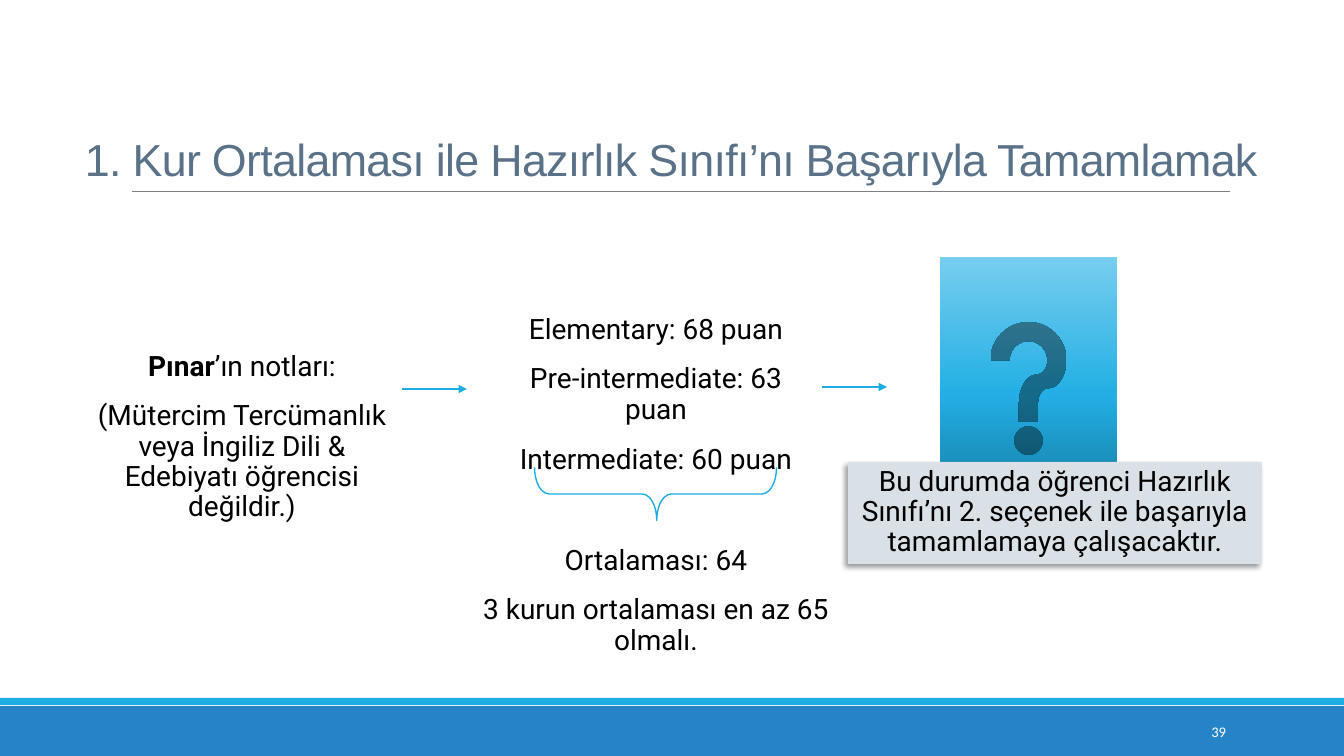
import copy

import pptx
import pptx.util
import pptx.dml.color
import pptx.enum.shapes
import pptx.enum.text
import pptx.oxml
import pptx.oxml.ns
from lxml import etree

# Content: boxes are (left, top, width, height) in px
SLIDE_SIZE = (1344, 756)
TITLE = ("1. Kur Ortalaması ile Hazırlık Sınıfı’nı Başarıyla Tamamlamak", (75, 31, 1270, 160))
PAGE_NUMBER = ("39", (1092, 712, 144, 40))
STUDENT = "Pınar"
PASSAGES = [
    ((94, 347, 296, 85), [
        [STUDENT, "’ın notları:"],
        ["(Mütercim Tercümanlık veya İngiliz Dili & Edebiyatı öğrencisi değildir.)"],
    ]),
    ((512, 310, 288, 135), [
        ["Elementary: 68 puan"],
        ["Pre-intermediate: 63 puan"],
        ["Intermediate: 60 puan"],
    ]),
    ((464, 541, 384, 85), [
        ["Ortalaması: 64"],
        ["3 kurun ortalaması en az 65 olmalı."],
    ]),
]
OUTCOME = ("Bu durumda öğrenci Hazırlık Sınıfı’nı 2. seçenek ile başarıyla tamamlamaya çalışacaktır.",
           (848, 462, 414, 102))
FOOTER_BANDS = [((0, 706, 1344, 50), "2683C6"), ((0, 698, 1344, 7), "1CADE4")]
TITLE_RULE = (132, 191, 1230, 191)
ARROWS = [(402, 389, 467, 389), (822, 387, 887, 387)]
HELP_BOX = (940, 257, 177, 263)
HELP_GRADIENT = [(0, "127499"), (0.48, "23AFE5"), (1, "77CEEF")]
BRACE_BOX = (629, 373, 53, 242)
ACCENT = "1CADE4"

SHAPE = pptx.enum.shapes.MSO_SHAPE
ALIGN = pptx.enum.text.PP_ALIGN
ANCHOR = pptx.enum.text.MSO_ANCHOR
Pt = pptx.util.Pt
qn = pptx.oxml.ns.qn


def px(lengths):
    return [pptx.util.Emu(round(length * 914400 / 100.8)) for length in lengths]


def color(hex_code):
    return pptx.dml.color.RGBColor.from_string(hex_code)


presentation = pptx.Presentation()
presentation.slide_width, presentation.slide_height = px(SLIDE_SIZE)
slide = presentation.slides.add_slide(presentation.slide_layouts[6])


def add_shape(kind, box, fill=None, line=None):
    shape = slide.shapes.add_shape(kind, *px(box))
    shape.shadow.inherit = False
    if fill:
        shape.fill.solid()
        shape.fill.fore_color.rgb = color(fill)
    else:
        shape.fill.background()
    if line:
        shape.line.color.rgb = color(line)
        shape.line.width = Pt(1)
    else:
        shape.line.fill.background()
    return shape


def add_line(ends, line, width, arrow=False):
    connector = slide.shapes.add_connector(pptx.enum.shapes.MSO_CONNECTOR.STRAIGHT, *px(ends))
    connector.line.color.rgb = color(line)
    connector.line.width = Pt(width)
    if arrow:
        etree.SubElement(connector.line._get_or_add_ln(), qn("a:tailEnd"), type="triangle")
    etree.SubElement(connector._element.spPr, qn("a:effectLst"))


def add_text_frame(box, anchor=ANCHOR.TOP):
    frame = slide.shapes.add_textbox(*px(box)).text_frame
    frame.word_wrap = True
    frame.vertical_anchor = anchor
    return frame


def style_run(run, font, size, hex_code):
    run.font.name = font
    run.font.size = Pt(size)
    run.font.color.rgb = color(hex_code)


def write_passage(frame, paragraphs):
    for index, parts in enumerate(paragraphs):
        paragraph = frame.add_paragraph() if index else frame.paragraphs[0]
        paragraph.alignment = ALIGN.CENTER
        paragraph.line_spacing = 0.9
        paragraph.space_before = Pt(12 if index else 0)
        paragraph.space_after = Pt(2)
        for part in parts:
            run = paragraph.add_run()
            run.text = part
            style_run(run, "Roboto", 20, "000000")
            run.font.bold = part == STUDENT


# Footer bands and title rule
for band_box, band_fill in FOOTER_BANDS:
    add_shape(SHAPE.RECTANGLE, band_box, band_fill)
add_line(TITLE_RULE, "808080", 0.5)

# Title
title_text, title_box = TITLE
title = add_text_frame(title_box, ANCHOR.BOTTOM)
title.text = title_text
title.paragraphs[0].line_spacing = 0.85
title_run = title.paragraphs[0].runs[0]
style_run(title_run, "Arial", 32, "597287")
title_run.font._element.set("spc", "-50")

# Grades and averages
for passage_box, passage in PASSAGES:
    passage_frame = add_text_frame(passage_box)
    passage_frame.margin_left = passage_frame.margin_right = 0
    write_passage(passage_frame, passage)

# Arrows between the steps
for arrow_ends in ARROWS:
    add_line(arrow_ends, ACCENT, 1, arrow=True)

# Question mark, dark at the bottom
help_button = add_shape(SHAPE.ACTION_BUTTON_HELP, HELP_BOX)
help_button.fill.gradient()
help_button.fill.gradient_angle = 90
stop_list = help_button._element.spPr.find(".//" + qn("a:gsLst"))
stop_list.append(copy.deepcopy(stop_list[-1]))
for stop, (position, stop_color) in zip(help_button.fill.gradient_stops, HELP_GRADIENT):
    stop.position = position
    stop.color.rgb = color(stop_color)

# Brace under the grades
brace = add_shape(SHAPE.RIGHT_BRACE, BRACE_BOX, line=ACCENT)
brace.rotation = 90
brace.adjustments[0] = 0.275
brace.adjustments[1] = 0.495

# Outcome with its shadow
outcome_text, outcome_box = OUTCOME
outcome = add_shape(SHAPE.RECTANGLE, outcome_box, "D9E0E6")
shadow = etree.SubElement(outcome._element.spPr.find(qn("a:effectLst")), qn("a:outerShdw"),
                          blurRad=str(Pt(4)), dist=str(Pt(3)), dir="8100000", algn="tr", rotWithShape="0")
shadow_color = etree.SubElement(shadow, qn("a:srgbClr"), val="000000")
etree.SubElement(shadow_color, qn("a:alpha"), val="40000")
outcome.text_frame.word_wrap = True
outcome.text_frame.vertical_anchor = ANCHOR.TOP
write_passage(outcome.text_frame, [[outcome_text]])

# Page number
number_text, number_box = PAGE_NUMBER
number = add_text_frame(number_box, ANCHOR.MIDDLE)
number.text = number_text
number.paragraphs[0].alignment = ALIGN.RIGHT
style_run(number.paragraphs[0].runs[0], "Calibri", 10.5, "FFFFFF")

presentation.save("out.pptx")
